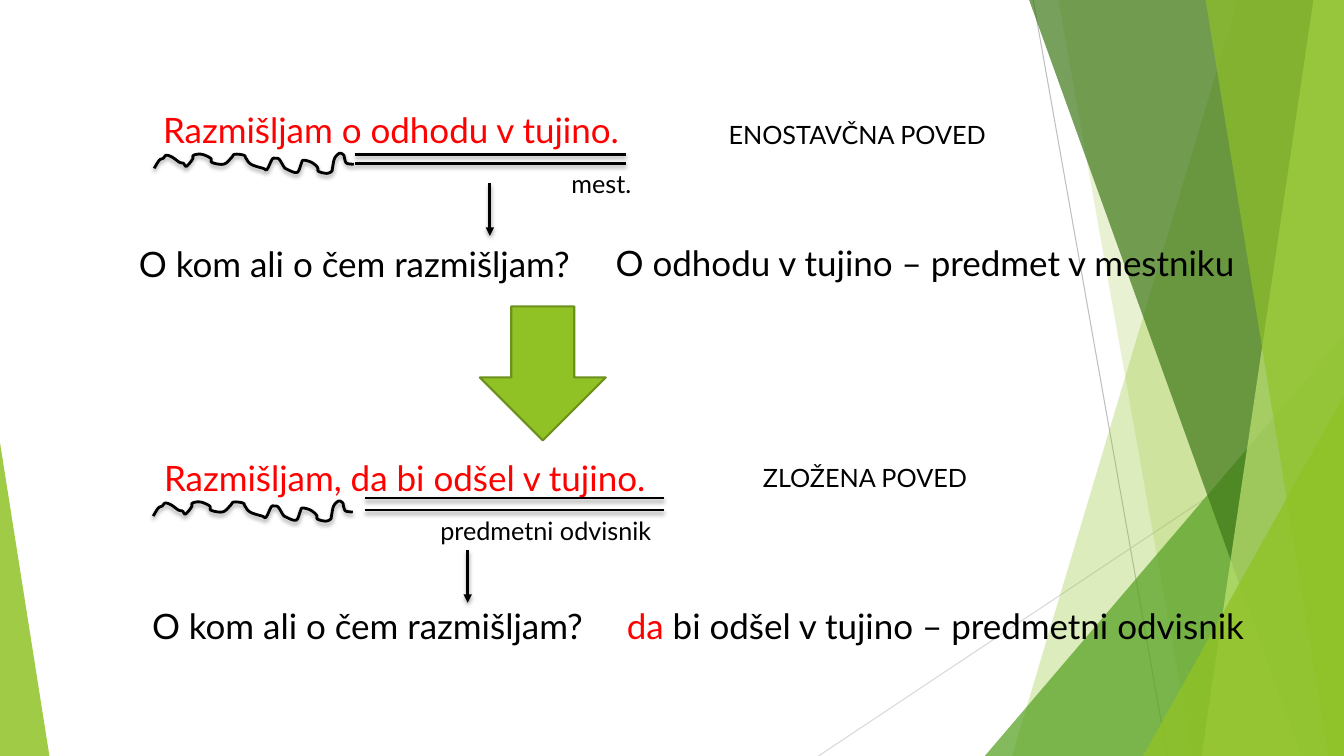
"""Build a slide that turns a simple sentence into a complex one."""
from dataclasses import dataclass
from typing import NamedTuple

from lxml import etree
from pptx import Presentation
from pptx import util as u
from pptx.dml.color import RGBColor
from pptx.enum import shapes, text
from pptx.oxml import ns

WIDTH, HEIGHT = 133.33, 75


@dataclass(frozen=True)
class Theme:
    """Colours, type sizes and line widths of the slide."""
    font: str = "Lato"
    sentence: float = 25
    label: float = 18
    ink: str = "000000"
    accent: str = "FF0000"
    green: str = "90C226"
    outline: str = "6B901C"
    grass: str = "54A021"
    forest: str = "3F7819"
    lime: str = "C0E474"
    hairline: str = "BFBFBF"
    pale_hairline: str = "D9D9D9"
    thin: float = 0.75
    border: float = 1.5
    stroke: float = 2


class Span(NamedTuple):
    """Text in one colour."""
    words: str
    color: str


class Caption(NamedTuple):
    """Text box placed by grid column and row."""
    left: float
    top: float
    width: float
    size: float
    spans: tuple[Span, ...]


class Line(NamedTuple):
    """Straight line between two grid points."""
    x1: float
    y1: float
    x2: float
    y2: float
    color: str
    weight: float
    arrow: bool = False
    shadow: bool = True


class Band(NamedTuple):
    """Translucent polygon with corners on the grid."""
    corners: tuple[tuple[float, float], ...]
    color: str
    opacity: int


class Wedge(NamedTuple):
    """Translucent triangle standing on the bottom edge."""
    left: float
    top: float
    width: float
    apex: float
    color: str
    opacity: int


THEME = Theme()


def grid(cells: float) -> u.Emu:
    """Convert grid columns or rows, ten to the inch, to a length."""
    return u.Inches(cells / 10)


def rightward(top: float, bottom: float, color: str, opacity: int) -> Band:
    """Describe a band from a slanted edge to the right side."""
    corners = ((top, 0), (WIDTH, 0), (WIDTH, HEIGHT), (bottom, HEIGHT))
    return Band(corners, color, opacity)


def plain(left: float, top: float, width: float, size: float,
          words: str, color: str = THEME.ink) -> Caption:
    """Describe a caption in one colour."""
    return Caption(left, top, width, size, (Span(words, color),))


def stroke(left: float, top: float, right: float, bottom: float,
           arrow: bool = False) -> Line:
    """Describe a black line with a shadow."""
    return Line(left, top, right, bottom, THEME.ink, THEME.stroke, arrow)


HAIRLINES = (
    Line(102.5, 0, 115.8, HEIGHT, THEME.hairline, THEME.thin, shadow=False),
    Line(WIDTH, 40.3, 81.2, HEIGHT, THEME.pale_hairline, THEME.thin, shadow=False),
)
BACKDROP = (
    rightward(122.8, 100.4, THEME.green, 30),
    rightward(105, 118.3, THEME.green, 20),
    Wedge(97.7, 33.3, 35.6, 1, THEME.grass, 72),
    rightward(102.1, 129.1, THEME.forest, 70),
    rightward(130.3, 119.2, THEME.lime, 70),
    rightward(119.6, 131.8, THEME.green, 65),
    Wedge(113.4, 39.3, 19.9, 1, THEME.green, 80),
    Wedge(0, 43.9, 4.9, 0, THEME.green, 85),
)
CAPTIONS = (
    plain(15.2, 10.3, 50, THEME.sentence, "Razmišljam o odhodu v tujino.", THEME.accent),
    plain(71.3, 11.3, 39.6, THEME.label, "ENOSTAVČNA POVED"),
    plain(55.7, 16.2, 11, THEME.label, "mest."),
    plain(12.8, 23.6, 67.1, THEME.sentence, "O kom ali o čem razmišljam?"),
    plain(60.1, 23.5, 67.1, THEME.sentence, "O odhodu v tujino – predmet v mestniku"),
    plain(15.3, 44.8, 74.3, THEME.sentence, "Razmišljam, da bi odšel v tujino.", THEME.accent),
    plain(74.7, 45.4, 39.6, THEME.label, "ZLOŽENA POVED"),
    plain(42.7, 50.6, 29.7, THEME.label, "predmetni odvisnik"),
    plain(14.1, 59.5, 67.1, THEME.sentence, "O kom ali o čem razmišljam?"),
    Caption(61.2, 59.5, 67.1, THEME.sentence, (
        Span("da", THEME.accent),
        Span(" bi odšel v tujino – predmetni odvisnik", THEME.ink))),
)
STROKES = (
    *(stroke(35.2, row, 62.1, row) for row in (15.3, 16.2)),
    *(stroke(36.2, row, 65.9, row) for row in (49.4, 50.6)),
    stroke(48.6, 18.2, 48.6, 23.4, arrow=True),
    stroke(46.4, 54.6, 46.4, 59.8, arrow=True),
)
WAVE_ORIGINS = ((15.3, 15.2), (15.2, 49.7))
WAVE = (
    (0, 1.5), (0.5, 0.7), (0.9, 0.5), (1.2, 0.2), (1.8, 0.4), (2.5, 0.9),
    (2.9, 1), (3.2, 1.3), (3.8, 0.6), (3.9, 0.2), (4.7, 0.1), (5.6, 0.5),
    (5.7, 0.9), (6.5, 1.1), (7.1, 1), (7.7, 0.4), (8, 0.1), (8.9, 0.2),
    (9.1, 0.5), (9.6, 1.1), (10.8, 1.5), (11.2, 1.6), (11.7, 0.6), (12, 0.5),
    (12.4, 0.6), (12.9, 1.4), (13.2, 1.6), (13.9, 1.9), (14.3, 1.8), (14.6, 1),
    (14.8, 0.7), (15.6, 0.9), (16.2, 1.4), (16.3, 1.8), (17.1, 2), (17.6, 1.8),
    (17.7, 1.4), (17.9, 0.5), (18.4, 0), (18.8, 0.2), (18.9, 0.6), (19.1, 1),
    (19.8, 1.1),
)


def add_shadow(element: etree._Element, visible: bool) -> None:
    """Replace the inherited shadow with a soft one or none."""
    effects = element.spPr.find(ns.qn("a:effectLst"))
    if effects is None:
        effects = etree.SubElement(element.spPr, ns.qn("a:effectLst"))
    if visible:
        outer = etree.SubElement(effects, ns.qn("a:outerShdw"), blurRad="38100",
                                 dist="25400", dir="5400000", rotWithShape="0")
        tint = etree.SubElement(outer, ns.qn("a:srgbClr"), val=THEME.ink)
        etree.SubElement(tint, ns.qn("a:alpha"), val="35000")


def draw_line(page, line: Line) -> None:
    """Draw a straight line, with an arrowhead if asked."""
    ends = (grid(cells) for cells in line[:4])
    connector = page.shapes.add_connector(shapes.MSO_CONNECTOR.STRAIGHT, *ends)
    connector.line.color.rgb = RGBColor.from_string(line.color)
    connector.line.width = u.Pt(line.weight)
    if line.arrow:
        outline = connector.element.spPr.find(ns.qn("a:ln"))
        etree.SubElement(outline, ns.qn("a:tailEnd"), type="triangle")
    add_shadow(connector.element, line.shadow)


def draw_path(page, points, close: bool):
    """Draw a freeform through grid points."""
    corners = [(grid(x), grid(y)) for x, y in points]
    builder = page.shapes.build_freeform(*corners[0], scale=1.0)
    builder.add_line_segments(corners[1:], close=close)
    shape = builder.convert_to_shape()
    shape.shadow.inherit = False
    return shape


def draw_backdrop(page, part: Band | Wedge) -> None:
    """Draw one translucent part of the background."""
    if isinstance(part, Band):
        shape = draw_path(page, part.corners, close=True)
    else:
        shape = page.shapes.add_shape(
            shapes.MSO_SHAPE.ISOSCELES_TRIANGLE, grid(part.left), grid(part.top),
            grid(part.width), grid(HEIGHT - part.top))
        shape.adjustments[0] = part.apex
        shape.shadow.inherit = False
    shape.fill.solid()
    shape.fill.fore_color.rgb = RGBColor.from_string(part.color)
    shape.line.fill.background()
    tint = shape.element.spPr.find(ns.qn("a:solidFill"))[0]
    etree.SubElement(tint, ns.qn("a:alpha"), val=str(part.opacity * 1000))


def smooth(points, steps: int = 4) -> list[tuple[float, float]]:
    """Interpolate a Catmull-Rom curve through the points."""
    padded = (points[0], *points, points[-1])
    curve = [points[0]]
    for a, b, c, d in zip(padded, padded[1:], padded[2:], padded[3:]):
        for t in (step / steps for step in range(1, steps + 1)):
            curve.append(tuple(
                q + t / 2 * (r - p + t * (2 * p - 5 * q + 4 * r - s
                                          + t * (3 * (q - r) + s - p)))
                for p, q, r, s in zip(a, b, c, d)))
    return curve


def draw_wave(page, left: float, top: float) -> None:
    """Draw a wavy underline."""
    points = [(left + x, top + y) for x, y in smooth(WAVE)]
    wave = draw_path(page, points, close=False)
    wave.fill.background()
    wave.line.color.rgb = RGBColor.from_string(THEME.ink)
    wave.line.width = u.Pt(THEME.stroke)
    add_shadow(wave.element, True)


def draw_caption(page, caption: Caption) -> None:
    """Draw a text box span by span."""
    height = u.Pt(caption.size * 1.2) + u.Inches(0.1)
    box = page.shapes.add_textbox(grid(caption.left), grid(caption.top),
                                  grid(caption.width), height)
    box.text_frame.word_wrap = True
    box.text_frame.auto_size = text.MSO_AUTO_SIZE.SHAPE_TO_FIT_TEXT
    para = box.text_frame.paragraphs[0]
    for words, color in caption.spans:
        span = para.add_run()
        span.text = words
        span.font.name = THEME.font
        span.font.size = u.Pt(caption.size)
        span.font.color.rgb = RGBColor.from_string(color)


def draw_down_arrow(page) -> None:
    """Draw the block arrow between the two sentences."""
    arrow = page.shapes.add_shape(shapes.MSO_SHAPE.DOWN_ARROW, grid(47.6),
                                  grid(30.4), grid(12.5), grid(13.3))
    arrow.shadow.inherit = False
    arrow.fill.solid()
    arrow.fill.fore_color.rgb = RGBColor.from_string(THEME.green)
    arrow.line.color.rgb = RGBColor.from_string(THEME.outline)
    arrow.line.width = u.Pt(THEME.border)


def main() -> None:
    """Build and save the deck."""
    deck = Presentation()
    deck.slide_width, deck.slide_height = grid(WIDTH), grid(HEIGHT)
    page = deck.slides.add_slide(deck.slide_layouts[6])
    for line in HAIRLINES:
        draw_line(page, line)
    for part in BACKDROP:
        draw_backdrop(page, part)
    for caption in CAPTIONS:
        draw_caption(page, caption)
    for origin in WAVE_ORIGINS:
        draw_wave(page, *origin)
    for line in STROKES:
        draw_line(page, line)
    draw_down_arrow(page)
    deck.save("out.pptx")


if __name__ == "__main__":
    main()
